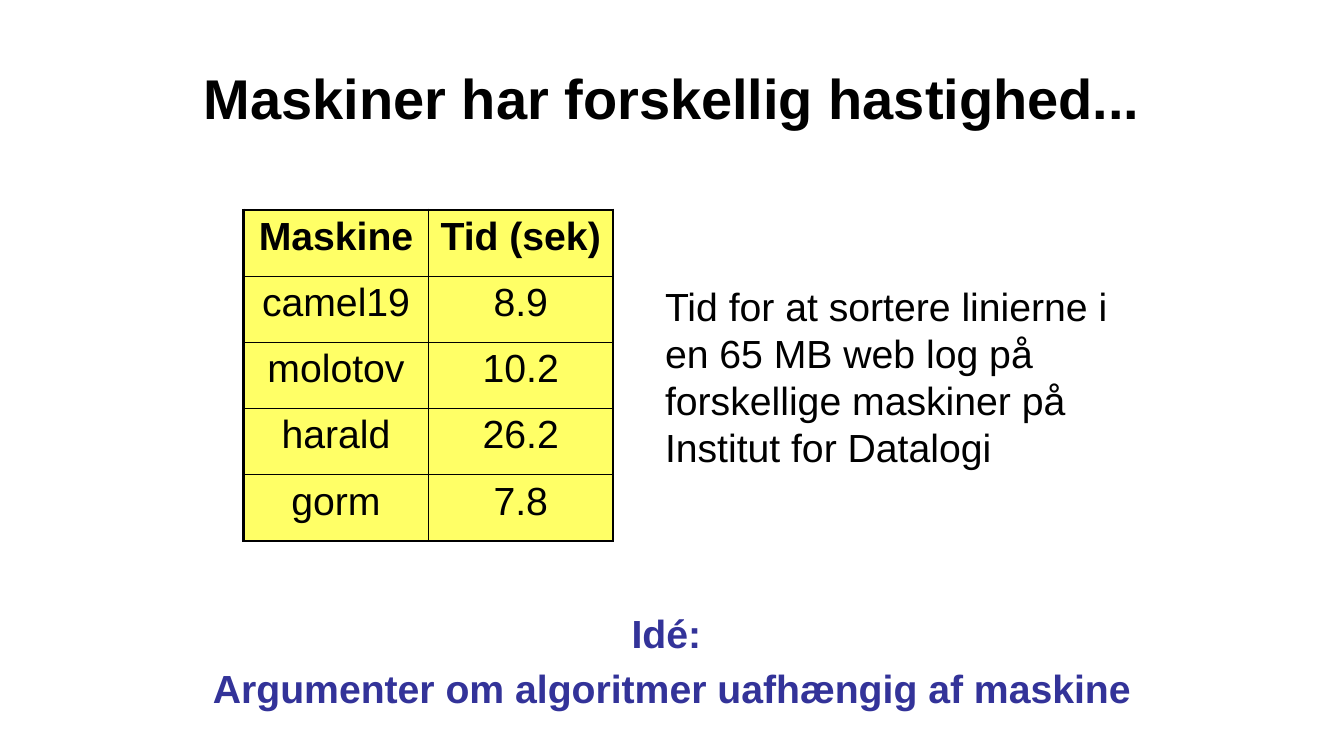
from lxml.etree import SubElement
from pptx import Presentation
from pptx.dml.color import RGBColor
from pptx.enum.text import MSO_ANCHOR as Anchor, PP_ALIGN as Align
from pptx.oxml.ns import qn
from pptx.util import Cm, Pt

COLORS = {"ink": "000000", "idea": "333399", "cell": "FFFF66"}
FONT = "Arial"
TIMINGS = [
    ("Maskine", "Tid (sek)"),
    ("camel19", "8.9"),
    ("molotov", "10.2"),
    ("harald", "26.2"),
    ("gorm", "7.8"),
]
THIN, THICK = Pt(1), Pt(2.25)


def write(frame, lines, color="ink", size=28, bold=False, align=Align.LEFT, before=5.6):
    """Fill a text frame with one formatted paragraph per line."""
    frame.word_wrap = True
    for index, line in enumerate(lines):
        paragraph = frame.paragraphs[0] if index == 0 else frame.add_paragraph()
        paragraph.alignment = align
        paragraph.space_before = Pt(before)
        run = paragraph.add_run()
        run.text = line
        for attribute, value in {"name": FONT, "size": Pt(size), "bold": bold}.items():
            setattr(run.font, attribute, value)
        run.font.color.rgb = RGBColor.from_string(COLORS[color])


def add_text(slide, box, lines, anchor=Anchor.TOP, **style):
    frame = slide.shapes.add_textbox(*map(Cm, box)).text_frame
    write(frame, lines, **style)
    frame.vertical_anchor = anchor


def set_borders(cell, widths):
    properties = cell._tc.get_or_add_tcPr()
    for position, (side, width) in enumerate(widths.items()):
        line = properties.makeelement(qn(f"a:ln{side}"), {"w": str(width)})
        fill = SubElement(line, qn("a:solidFill"))
        SubElement(fill, qn("a:srgbClr"), val=COLORS["ink"])
        properties.insert(position, line)


def add_timings(slide, box):
    """Place the table of machines, with a thick outer frame and thin inner lines."""
    rows, columns = len(TIMINGS), len(TIMINGS[0])
    table = slide.shapes.add_table(rows, columns, *map(Cm, box)).table
    for r, timing in enumerate(TIMINGS):
        for c, value in enumerate(timing):
            cell = table.cell(r, c)
            write(cell.text_frame, [value], bold=r == 0, align=Align.CENTER)
            cell.fill.solid()
            cell.fill.fore_color.rgb = RGBColor.from_string(COLORS["cell"])
            outer = {"L": c == 0, "R": c == columns - 1, "T": r == 0, "B": r == rows - 1}
            set_borders(cell, {side: THICK if edge else THIN for side, edge in outer.items()})


def build_slide(presentation):
    slide = presentation.slides.add_slide(presentation.slide_layouts[6])
    add_text(slide, (4.23, 0.85, 25.4, 3.18), ["Maskiner har forskellig hastighed..."],
             anchor=Anchor.MIDDLE, size=40, bold=True, align=Align.CENTER, before=0)
    add_text(slide, (16.51, 6.99, 11.85, 5.08),
             ["Tid for at sortere linierne i en 65 MB web log på "
              "forskellige maskiner på Institut for Datalogi"])
    add_timings(slide, (6.14, 5.29, 9.31, 8.34))
    add_text(slide, (4.23, 15.24, 25.4, 2.54),
             ["Idé: ", "Argumenter om algoritmer uafhængig af maskine"],
             color="idea", bold=True, align=Align.CENTER)


def main():
    presentation = Presentation()
    presentation.slide_width, presentation.slide_height = Cm(33.87), Cm(19.05)
    build_slide(presentation)
    presentation.save("out.pptx")


if __name__ == "__main__":
    main()
